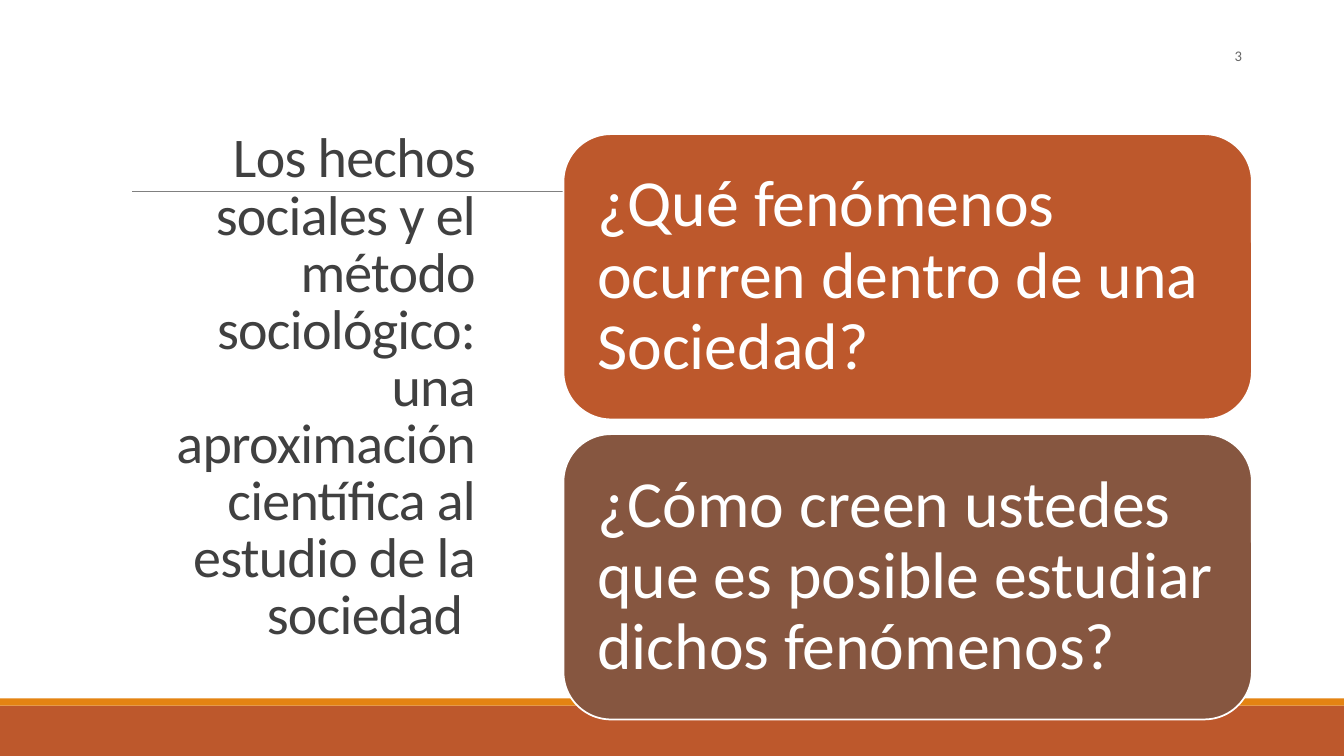
from pptx import Presentation
from pptx.dml.color import RGBColor
from pptx.enum.shapes import MSO_CONNECTOR, MSO_SHAPE
from pptx.enum.text import MSO_ANCHOR, PP_ALIGN
from pptx.oxml.ns import qn
from pptx.util import Cm, Pt
from lxml import etree

COLORS = {
    "rust": "BD582C",
    "orange": "E48312",
    "brown": "865640",
    "rule": "808080",
    "title": "404040",
    "number": "666666",
    "white": "FFFFFF",
}
FONT = "Calibri"
SLIDE_WIDTH, SLIDE_HEIGHT = 33.87, 19.05
TITLE = ("Los hechos sociales y el método sociológico: una aproximación "
         "científica al estudio de la sociedad ")
QUESTIONS = [
    ("¿Qué fenómenos ocurren dentro de una Sociedad?", "rust"),
    ("¿Cómo creen ustedes que es posible estudiar dichos fenómenos?", "brown"),
]
CARD_LEFT, CARD_TOP, CARD_WIDTH, CARD_HEIGHT = 14.2, 3.38, 17.35, 7.19
CARD_STEP = 7.56


def rgb(name):
    return RGBColor.from_string(COLORS[name])


def add_panel(slide, kind, left, top, width, height, fill):
    panel = slide.shapes.add_shape(kind, Cm(left), Cm(top), Cm(width), Cm(height))
    panel.shadow.inherit = False
    panel.fill.solid()
    panel.fill.fore_color.rgb = rgb(fill)
    panel.line.fill.background()
    return panel


def add_rule(slide, left, right, top):
    rule = slide.shapes.add_connector(
        MSO_CONNECTOR.STRAIGHT, Cm(left), Cm(top), Cm(right), Cm(top))
    rule.line.color.rgb = rgb("rule")
    rule.line.width = Pt(0.5)
    etree.SubElement(rule._element.spPr, qn("a:effectLst"))


def write(frame, text, size, color, align, anchor):
    """Fill a text frame with one paragraph and return its paragraph and run."""
    frame.word_wrap = True
    frame.vertical_anchor = anchor
    paragraph = frame.paragraphs[0]
    paragraph.alignment = align
    run = paragraph.add_run()
    run.text = text
    run.font.name = FONT
    run.font.size = Pt(size)
    run.font.color.rgb = rgb(color)
    return paragraph, run


def add_title(slide):
    title = slide.shapes.add_textbox(Cm(1.27), Cm(0.89), Cm(10.95), Cm(15.52))
    paragraph, run = write(title.text_frame, TITLE, 40, "title",
                           PP_ALIGN.RIGHT, MSO_ANCHOR.BOTTOM)
    paragraph.line_spacing = 0.85
    paragraph.space_after = Pt(6)
    paragraph._p.get_or_add_pPr().set("marL", str(Cm(1.9)))
    run.font._element.set("spc", "-50")


def add_slide_number(slide):
    number = slide.shapes.add_textbox(Cm(23.93), Cm(0.89), Cm(7.62), Cm(1.02))
    write(number.text_frame, "3", 10.5, "number", PP_ALIGN.RIGHT, MSO_ANCHOR.MIDDLE)


def add_question(slide, question, fill, top):
    card = add_panel(slide, MSO_SHAPE.ROUNDED_RECTANGLE,
                     CARD_LEFT, top, CARD_WIDTH, CARD_HEIGHT, fill)
    card.line.color.rgb = rgb("white")
    card.line.width = Pt(1.25)
    frame = card.text_frame
    frame.margin_left = frame.margin_right = Cm(0.5)
    frame.margin_top = frame.margin_bottom = Cm(0.5)
    paragraph, _ = write(frame, question, 47, "white",
                         PP_ALIGN.LEFT, MSO_ANCHOR.MIDDLE)
    paragraph.line_spacing = 0.9


def main():
    presentation = Presentation()
    presentation.slide_width = Cm(SLIDE_WIDTH)
    presentation.slide_height = Cm(SLIDE_HEIGHT)
    slide = presentation.slides.add_slide(presentation.slide_layouts[6])

    add_panel(slide, MSO_SHAPE.RECTANGLE, 0, 17.78, SLIDE_WIDTH, 1.27, "rust")
    add_panel(slide, MSO_SHAPE.RECTANGLE, 0, 17.6, SLIDE_WIDTH, 0.18, "orange")
    add_rule(slide, 3.33, 31.01, 4.83)
    add_title(slide)
    add_slide_number(slide)
    for index, (question, fill) in enumerate(QUESTIONS):
        add_question(slide, question, fill, CARD_TOP + index * CARD_STEP)

    presentation.save("out.pptx")


if __name__ == "__main__":
    main()
